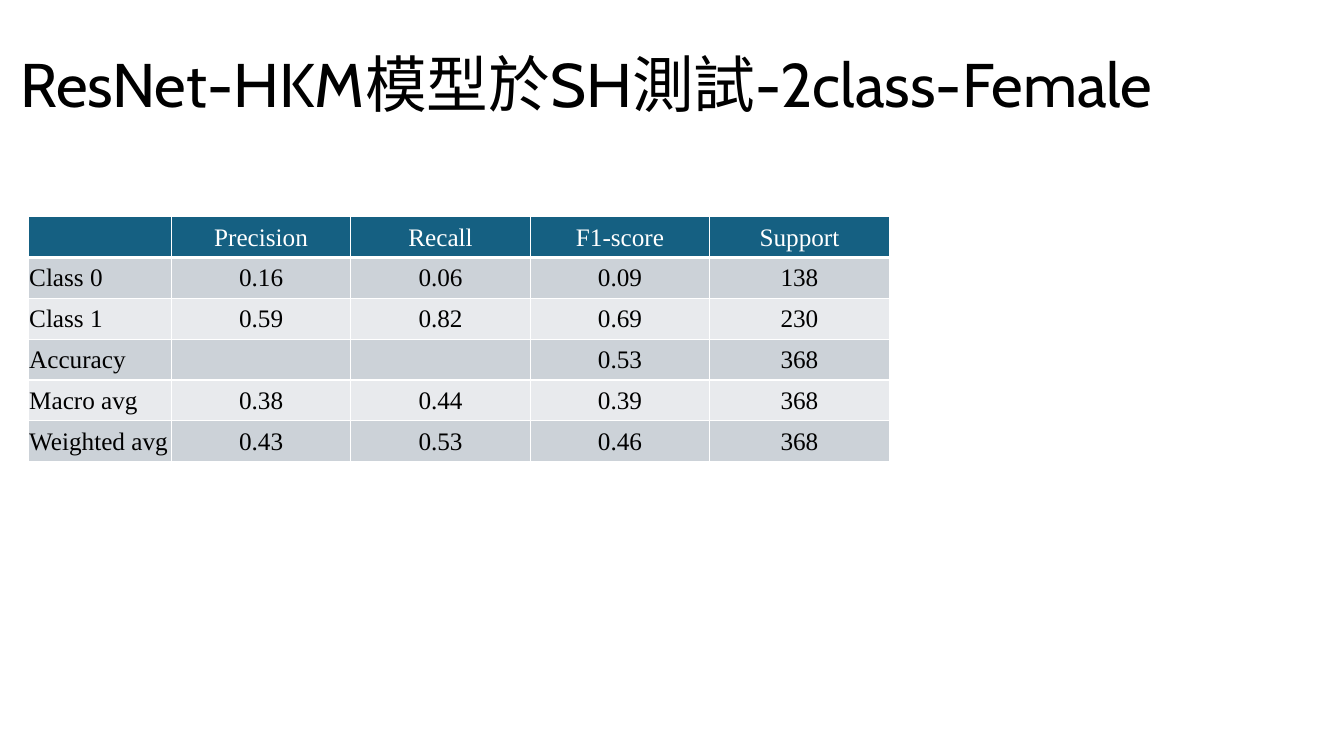
import pptx
import pptx.dml.color
import pptx.enum.text
import pptx.oxml.ns
import pptx.util
from lxml import etree

Inches = pptx.util.Inches
Pt = pptx.util.Pt
ALIGN = pptx.enum.text.PP_ALIGN
MIDDLE = pptx.enum.text.MSO_ANCHOR.MIDDLE

# Content
TITLE = "ResNet-HKM模型於SH測試-2class-Female"
SCORES = [
    ("", "Precision", "Recall", "F1-score", "Support"),
    ("Class 0", "0.16", "0.06", "0.09", "138"),
    ("Class 1", "0.59", "0.82", "0.69", "230"),
    ("Accuracy", "", "", "0.53", "368"),
    ("Macro avg", "0.38", "0.44", "0.39", "368"),
    ("Weighted avg", "0.43", "0.53", "0.46", "368"),
]
COLUMN_WIDTHS = [1.42] + [1.78] * 4
ROW_HEIGHT = 0.405
HEADER_FILL = "156082"
BAND_FILLS = ["E8EAED", "CCD2D8"]


def color(value):
    return pptx.dml.color.RGBColor.from_string(value)


def style_paragraph(paragraph, font_name, size, text_color, alignment):
    paragraph.alignment = alignment
    for run in paragraph.runs:
        run.font.name = font_name
        run.font.size = Pt(size)
        run.font.bold = False
        run.font.color.rgb = color(text_color)


def add_border(cell, side, points):
    qn = pptx.oxml.ns.qn
    properties = cell._tc.get_or_add_tcPr()
    line = etree.SubElement(properties, qn("a:" + side), w=str(Pt(points)))
    fill = etree.SubElement(line, qn("a:solidFill"))
    etree.SubElement(fill, qn("a:srgbClr"), val="FFFFFF")


def style_cell(cell, row, column):
    header = row == 0
    cell.vertical_anchor = MIDDLE
    cell.margin_left = cell.margin_top = cell.margin_right = Inches(0.01)
    cell.margin_bottom = 0
    # Borders go before the fill; the rule under the header is thicker
    for side, points in (("lnL", 1), ("lnR", 1),
                         ("lnT", 3 if row == 1 else 1),
                         ("lnB", 3 if header else 1)):
        add_border(cell, side, points)
    cell.fill.solid()
    cell.fill.fore_color.rgb = color(HEADER_FILL if header else BAND_FILLS[row % 2])
    style_paragraph(cell.text_frame.paragraphs[0], "Times New Roman", 18,
                    "FFFFFF" if header else "000000",
                    ALIGN.CENTER if header or column else ALIGN.LEFT)


def main():
    presentation = pptx.Presentation()
    presentation.slide_width = Inches(13.33)
    presentation.slide_height = Inches(7.5)
    slide = presentation.slides.add_slide(presentation.slide_layouts[5])

    # Title
    title = slide.shapes.title
    title.left, title.top = Inches(0.1), Inches(0.14)
    title.width, title.height = Inches(13.04), Inches(1.45)
    title.text_frame.text = TITLE
    title.text_frame.vertical_anchor = MIDDLE
    paragraph = title.text_frame.paragraphs[0]
    paragraph.line_spacing = 0.9
    style_paragraph(paragraph, "Cabin", 44, "000000", ALIGN.LEFT)

    # Score table
    table = slide.shapes.add_table(
        len(SCORES), len(COLUMN_WIDTHS), Inches(0.28), Inches(2.15),
        Inches(sum(COLUMN_WIDTHS)), Inches(ROW_HEIGHT * len(SCORES))).table
    for column, width in enumerate(COLUMN_WIDTHS):
        table.columns[column].width = Inches(width)
    for row, values in enumerate(SCORES):
        table.rows[row].height = Inches(ROW_HEIGHT)
        for column, value in enumerate(values):
            cell = table.cell(row, column)
            if value:
                cell.text_frame.text = value
            style_cell(cell, row, column)

    presentation.save("out.pptx")


if __name__ == "__main__":
    main()
